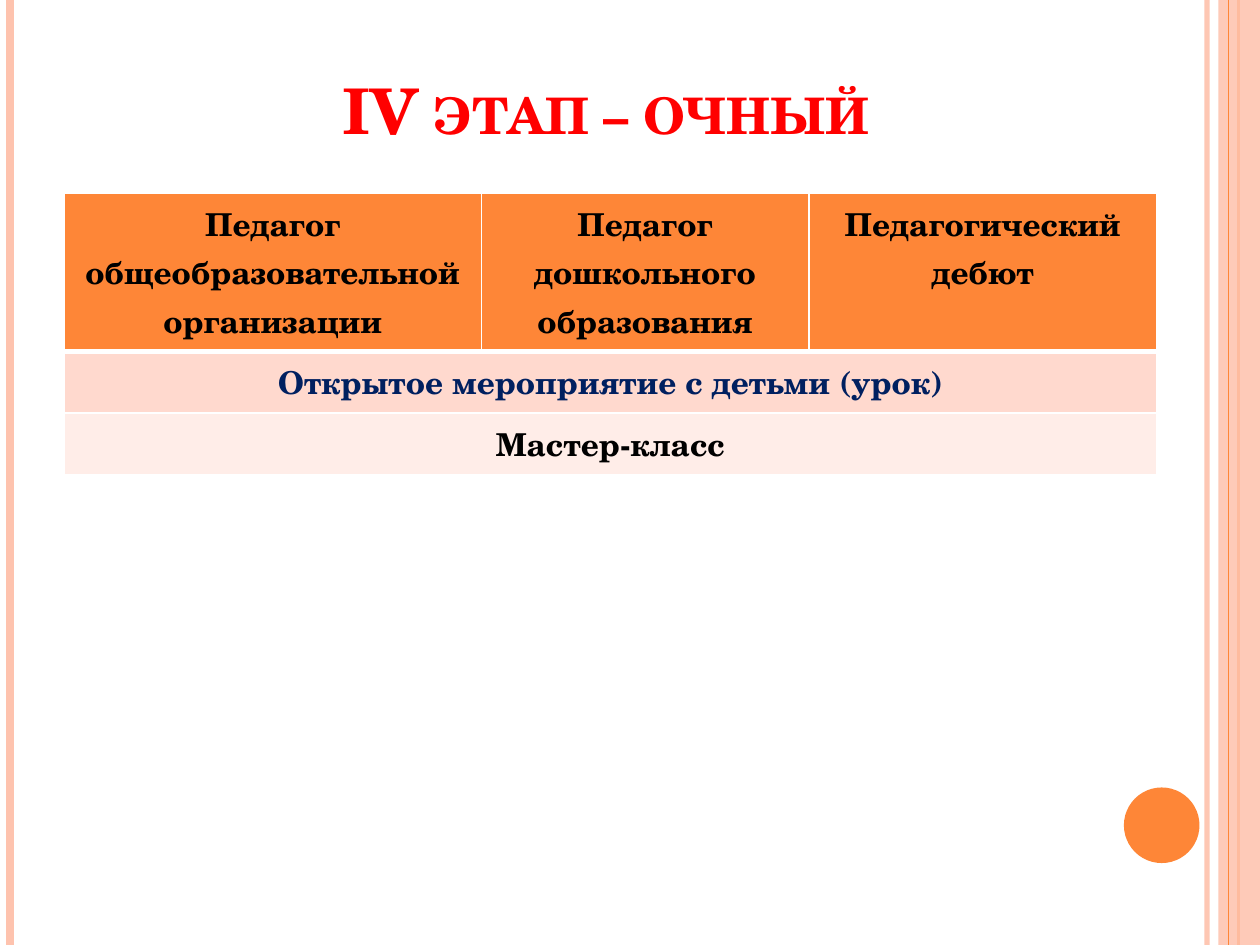
from dataclasses import dataclass

from lxml import etree
from pptx import Presentation
from pptx.dml.color import RGBColor
from pptx.enum.shapes import MSO_CONNECTOR, MSO_SHAPE
from pptx.enum.text import MSO_ANCHOR, PP_ALIGN
from pptx.oxml.ns import qn
from pptx.util import Inches, Pt


@dataclass(frozen=True)
class Theme:
    font: str = "TeX Gyre Schola"
    title_size: int = 36
    table_size: int = 18
    orange: str = "FE8637"
    peach: str = "FEC3AE"
    band_dark: str = "FFD9CE"
    band_light: str = "FFEDE8"
    white: str = "FFFFFF"
    black: str = "000000"
    red: str = "FF0000"
    navy: str = "002060"


def write_text(frame, text, *, font, size, color, bold=True, small_caps=False,
               align=PP_ALIGN.CENTER):
    paragraph = frame.paragraphs[0]
    paragraph.alignment = align
    run = paragraph.add_run()
    run.text = text
    run.font.name = font
    run.font.size = Pt(size)
    run.font.bold = bold
    run.font.color.rgb = RGBColor.from_string(color)
    if small_caps:
        run.font._element.set("cap", "small")


def set_opacity(element, percent):
    color = next(element.iter(qn("a:srgbClr")))
    etree.SubElement(color, qn("a:alpha")).set("val", str(percent * 1000))


class SlideBuilder:
    def __init__(self, slide, theme):
        self.slide = slide
        self.theme = theme

    def vertical_line(self, x, color, width, opacity=100):
        line = self.slide.shapes.add_connector(
            MSO_CONNECTOR.STRAIGHT, Inches(x), 0, Inches(x), Inches(7.5))
        line.line.color.rgb = RGBColor.from_string(color)
        line.line.width = Pt(width)
        properties = line._element.spPr
        etree.SubElement(properties, qn("a:effectLst"))
        if opacity < 100:
            set_opacity(properties, opacity)

    def filled_shape(self, kind, box, color, opacity=100):
        shape = self.slide.shapes.add_shape(kind, *map(Inches, box))
        shape.shadow.inherit = False
        shape.fill.solid()
        shape.fill.fore_color.rgb = RGBColor.from_string(color)
        shape.line.fill.background()
        if opacity < 100:
            set_opacity(shape._element.spPr, opacity)

    def title(self, text, box):
        title = self.slide.shapes.title
        title.left, title.top, title.width, title.height = map(Inches, box)
        title.text_frame.vertical_anchor = MSO_ANCHOR.BOTTOM
        write_text(title.text_frame, text, font=self.theme.font,
                   size=self.theme.title_size, color=self.theme.red, small_caps=True)

    def cell(self, cell, text, fill, color):
        cell.fill.solid()
        cell.fill.fore_color.rgb = RGBColor.from_string(fill)
        write_text(cell.text_frame, text, font=self.theme.font,
                   size=self.theme.table_size, color=color)

    def cell_borders(self, cell, bottom):
        properties = cell._tc.get_or_add_tcPr()
        widths = {"a:lnL": 1, "a:lnR": 1, "a:lnT": 1, "a:lnB": bottom}
        for index, (tag, width) in enumerate(widths.items()):
            border = etree.Element(qn(tag), w=str(Pt(width)))
            fill = etree.SubElement(border, qn("a:solidFill"))
            etree.SubElement(fill, qn("a:srgbClr")).set("val", self.theme.white)
            properties.insert(index, border)

    def table(self, box, column_widths, row_heights, headers, merged_rows):
        table = self.slide.shapes.add_table(
            len(row_heights), len(column_widths), *map(Inches, box)).table
        for column, width in zip(table.columns, column_widths):
            column.width = Inches(width)
        for row, height in zip(table.rows, row_heights):
            row.height = Inches(height)
        for cell, text in zip(table.rows[0].cells, headers):
            self.cell(cell, text, self.theme.orange, self.theme.black)
        # Each row below the header spans the full width
        for row, (text, fill, color) in enumerate(merged_rows, start=1):
            first = table.cell(row, 0)
            first.merge(table.cell(row, len(column_widths) - 1))
            self.cell(first, text, fill, color)
        for index, row in enumerate(table.rows):
            for cell in row.cells:
                self.cell_borders(cell, bottom=3 if index == 0 else 1)


def main():
    theme = Theme()
    presentation = Presentation()
    presentation.slide_width, presentation.slide_height = Inches(10), Inches(7.5)
    slide = presentation.slides.add_slide(presentation.slide_layouts[5])
    builder = SlideBuilder(slide, theme)

    # Side stripes and corner circle
    builder.vertical_line(9.58, theme.peach, 3, opacity=93)
    builder.vertical_line(0.08, theme.peach, 4.5)
    builder.vertical_line(9.83, theme.orange, 1.5)
    builder.filled_shape(MSO_SHAPE.RECTANGLE, (9.67, 0, 0.33, 7.5), theme.peach, opacity=87)
    builder.vertical_line(9.75, theme.orange, 0.75)
    builder.filled_shape(MSO_SHAPE.OVAL, (8.92, 6.25, 0.6, 0.6), theme.orange)

    # Title
    builder.title("IV этап – очный", (0.28, -0.03, 9.06, 1.25))

    # Contest stages by category
    builder.table(
        (0.51, 1.53, 8.66, 1.8),
        column_widths=(3.31, 2.6, 2.76),
        row_heights=(0.79, 0.32, 0.32),
        headers=("Педагог общеобразовательной организации",
                 "Педагог дошкольного образования",
                 "Педагогический дебют"),
        merged_rows=(
            ("Открытое мероприятие с детьми (урок)", theme.band_dark, theme.navy),
            ("Мастер-класс", theme.band_light, theme.black),
        ),
    )
    presentation.save("out.pptx")


if __name__ == "__main__":
    main()
